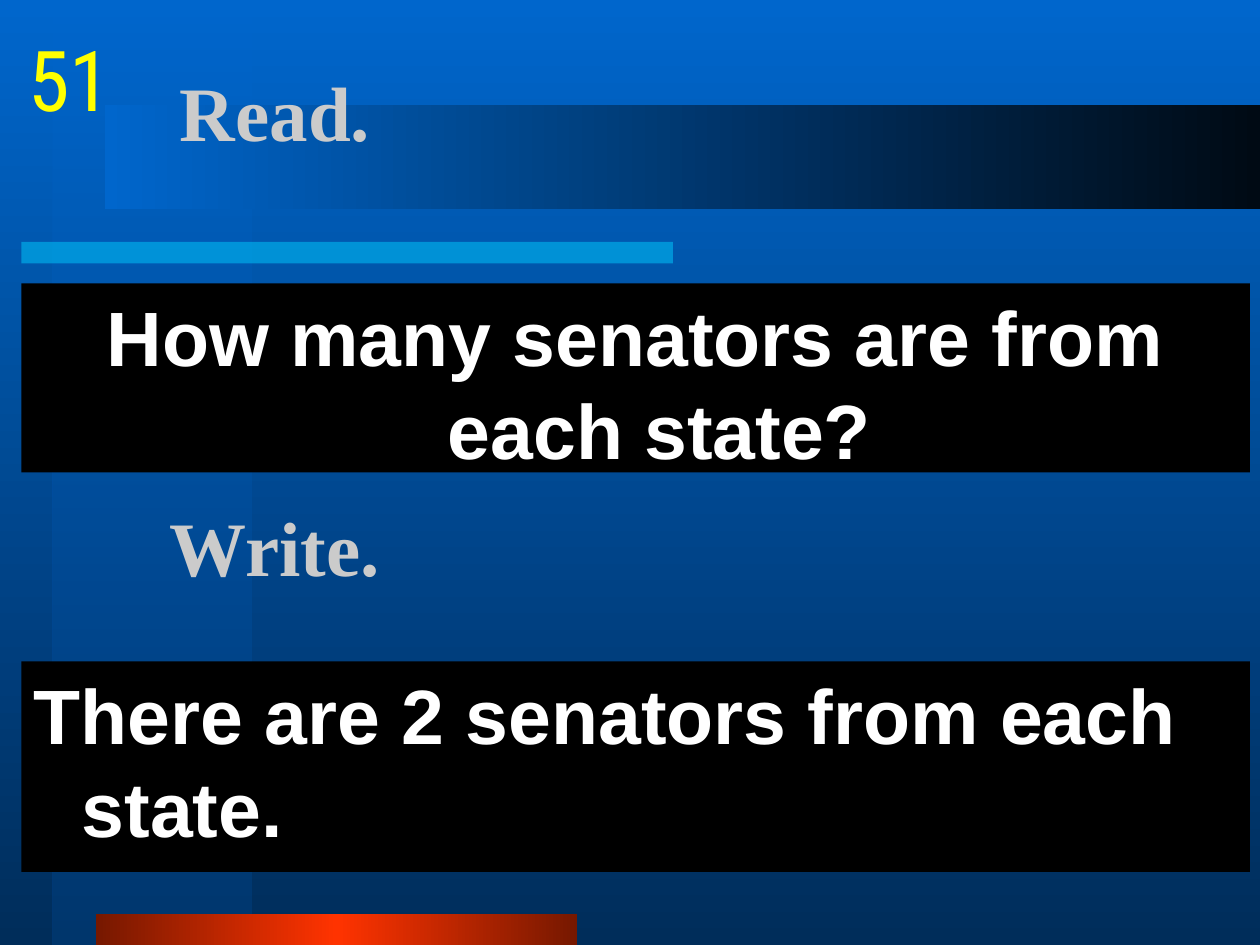
from dataclasses import dataclass

from lxml import etree
from pptx import Presentation
from pptx.dml.color import RGBColor
from pptx.dml.fill import FillFormat
from pptx.enum import shapes, text
from pptx.oxml import ns
from pptx.util import Inches, Pt

Box = tuple[float, float, float, float]


@dataclass
class Band:
    box: Box
    colors: list[str]
    angle: int = 0
    alpha: int = 100


BANDS = [
    Band((0.42, 0, 1.58, 7.5), ["0066CC", "003F7F"], 90, 50),
    Band((0.17, 1.92, 5.17, 0.17), ["00CCFF"], alpha=50),
    Band((0.76, 7.25, 3.82, 0.25), ["761800", "FF3300", "761800"]),
    Band((0.83, 0.83, 9.17, 0.83), ["0066CC", "000A14"]),
]


def color(value: str) -> RGBColor:
    return RGBColor.from_string(value)


def add_color(parent, value: str, alpha: int) -> None:
    node = etree.SubElement(parent, ns.qn("a:srgbClr"), val=value)
    if alpha < 100:
        etree.SubElement(node, ns.qn("a:alpha"), val=str(alpha * 1000))


def paint(fill: FillFormat, root, colors: list[str], angle: int = 0, alpha: int = 100) -> None:
    """Fill with one colour or evenly spaced gradient stops; angle is clockwise."""
    if len(colors) == 1:
        fill.solid()
        fill.fore_color.rgb = color(colors[0])
        solid = root.find(".//" + ns.qn("a:solidFill"))
        solid.remove(solid[0])
        add_color(solid, colors[0], alpha)
        return
    fill.gradient()
    fill.gradient_angle = -angle % 360
    stops = root.find(".//" + ns.qn("a:gsLst"))
    for stop in list(stops):
        stops.remove(stop)
    for index, value in enumerate(colors):
        position = round(100000 * index / (len(colors) - 1))
        stop = etree.SubElement(stops, ns.qn("a:gs"), pos=str(position))
        add_color(stop, value, alpha)


def add_band(page, band: Band) -> None:
    shape = page.shapes.add_shape(shapes.MSO_SHAPE.RECTANGLE, *map(Inches, band.box))
    shape.shadow.inherit = False
    shape.line.fill.background()
    paint(shape.fill, shape._element.spPr, band.colors, band.angle, band.alpha)


def add_text(page, words: str, box: Box, *, font: str = "Arial", size: int = 44,
             ink: str = "FFFFFF", bold: bool = True, fill: str | None = None,
             align=text.PP_ALIGN.LEFT, anchor=text.MSO_ANCHOR.TOP,
             hanging: float = 0, before: float = 0, side_inset: float = 0.1) -> None:
    shape = page.shapes.add_textbox(*map(Inches, box))
    if fill:
        shape.fill.solid()
        shape.fill.fore_color.rgb = color(fill)
    frame = shape.text_frame
    frame.word_wrap = True
    frame.vertical_anchor = anchor
    frame.margin_left = frame.margin_right = Inches(side_inset)
    para = frame.paragraphs[0]
    para.alignment = align
    para.space_before = Pt(before)
    if hanging:
        properties = para._p.get_or_add_pPr()
        properties.set("marL", str(Inches(hanging)))
        properties.set("indent", str(-Inches(hanging)))
    span = para.add_run()
    span.text = words
    span.font.name = font
    span.font.size = Pt(size)
    span.font.bold = bold
    span.font.color.rgb = color(ink)


def main() -> None:
    deck = Presentation()
    deck.slide_width, deck.slide_height = Inches(10), Inches(7.5)
    page = deck.slides.add_slide(deck.slide_layouts[6])
    paint(page.background.fill, page._element, ["0066CC", "002D5A"], 90)
    for band in BANDS:
        add_band(page, band)

    heading = dict(font="Times New Roman", ink="CBCBCB", anchor=text.MSO_ANCHOR.MIDDLE)
    panel = dict(fill="000000", hanging=0.38, before=2)
    add_text(page, "Read.", (1.33, 0.25, 8.5, 1.25), **heading)
    add_text(page, "How many senators are from each state?", (0.17, 2.25, 9.75, 1.5),
             align=text.PP_ALIGN.CENTER, **panel)
    add_text(page, "Write.", (1.25, 3.5, 8.5, 1.67), **heading)
    add_text(page, "There are 2 senators from each state.", (0.17, 5.25, 9.75, 1.67), **panel)
    add_text(page, "51", (0.14, 0.17, 0.83, 0.83), font="Roboto Condensed", size=48,
             ink="FFFF00", bold=False, align=text.PP_ALIGN.CENTER, side_inset=0)
    deck.save("out.pptx")


if __name__ == "__main__":
    main()
